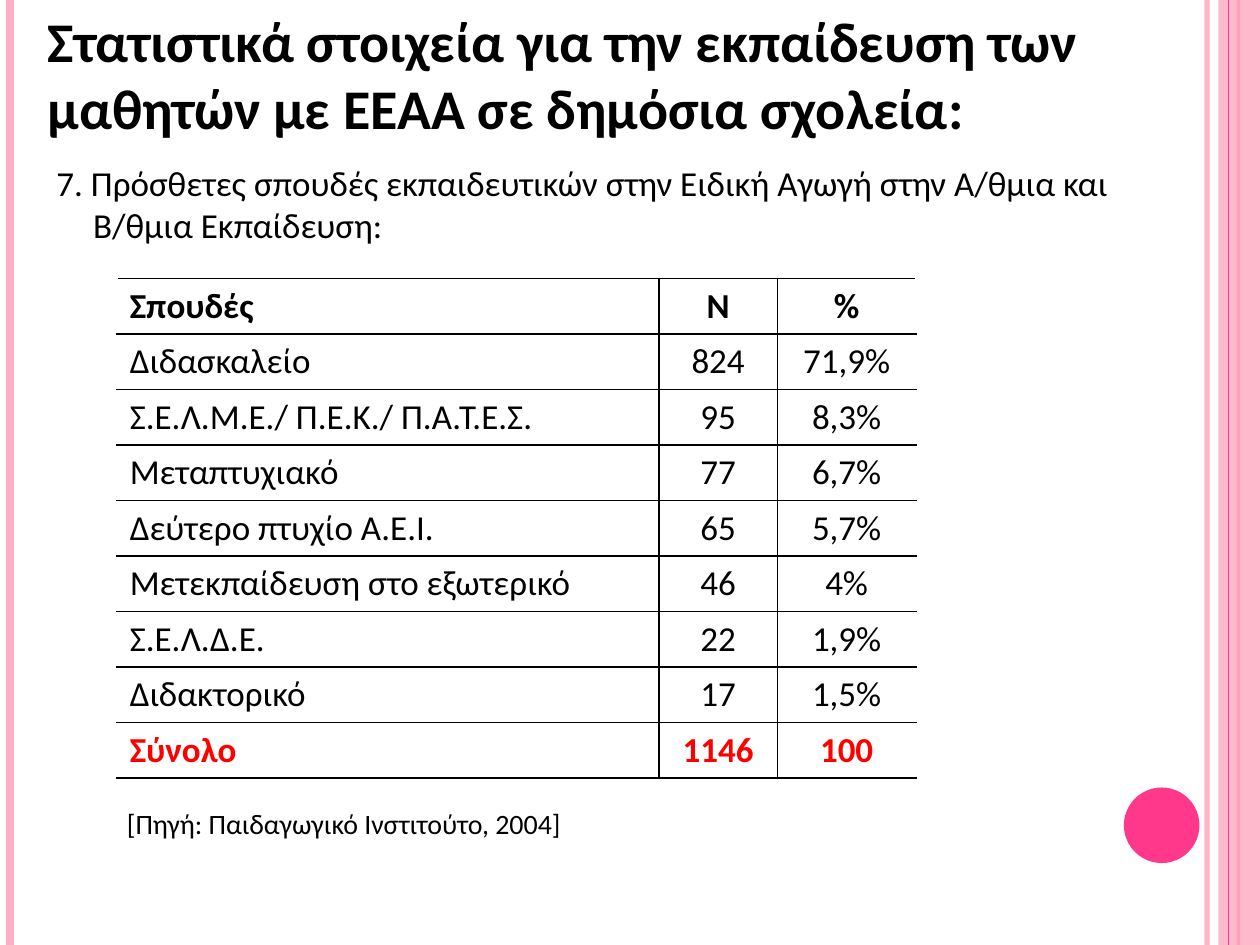
"""Build the slide on teachers' additional studies in special education."""
from lxml import etree
from pptx import Presentation
from pptx.dml.color import RGBColor
from pptx.enum import shapes, text
from pptx.oxml import ns
from pptx.util import Inches, Pt

COLORS = {"pink": "FFAFC5", "magenta": "FF388C", "black": "000000",
          "red": "FF0000", "white": "FFFFFF"}
FONT = "Calibri"

HEADING = "Στατιστικά στοιχεία για την εκπαίδευση των μαθητών με ΕΕΑΑ σε δημόσια σχολεία:"
QUESTION = ("7. Πρόσθετες σπουδές εκπαιδευτικών στην Ειδική Αγωγή στην Α/θμια "
            "και Β/θμια Εκπαίδευση:")
SOURCE = "[Πηγή: Παιδαγωγικό Ινστιτούτο, 2004]"
STUDIES = [
    ("Σπουδές", "Ν", "%"),
    ("Διδασκαλείο", "824", "71,9%"),
    ("Σ.Ε.Λ.Μ.Ε./ Π.Ε.Κ./ Π.Α.Τ.Ε.Σ.", "95", "8,3%"),
    ("Μεταπτυχιακό", "77", "6,7%"),
    ("Δεύτερο πτυχίο Α.Ε.Ι.", "65", "5,7%"),
    ("Μετεκπαίδευση στο εξωτερικό", "46", "4%"),
    ("Σ.Ε.Λ.Δ.Ε.", "22", "1,9%"),
    ("Διδακτορικό", "17", "1,5%"),
    ("Σύνολο", "1146", "100"),
]
COLUMN_WIDTHS = (4.3, 0.94, 1.1)
TABLE_LEFT, TABLE_TOP, TABLE_HEIGHT = 0.93, 2.21, 3.9

# (x, colour, width in points, opacity in percent)
STRIPES_BEHIND = [(9.58, "pink", 3, 93), (0.08, "pink", 4.5, 100),
                  (9.83, "magenta", 1.5, 100)]
STRIPES_FRONT = [(9.75, "magenta", 0.75, 100)]


def rgb(color):
    return RGBColor.from_string(COLORS[color])


def set_opacity(fill_parent, percent):
    color = next(fill_parent.iter(ns.qn("a:srgbClr")))
    etree.SubElement(color, ns.qn("a:alpha"), val=str(percent * 1000))


def add_stripes(slide, stripes):
    for x, color, width, opacity in stripes:
        stripe = slide.shapes.add_connector(
            shapes.MSO_CONNECTOR.STRAIGHT, Inches(x), 0, Inches(x), Inches(7.5))
        stripe.line.color.rgb = rgb(color)
        stripe.line.width = Pt(width)
        properties = stripe.element.spPr
        if opacity < 100:
            set_opacity(properties, opacity)
        etree.SubElement(properties, ns.qn("a:effectLst"))


def add_plain_shape(slide, kind, box, color):
    shape = slide.shapes.add_shape(kind, *map(Inches, box))
    shape.shadow.inherit = False
    shape.fill.solid()
    shape.fill.fore_color.rgb = rgb(color)
    shape.line.fill.background()
    return shape


def write(frame, words, size, color="black", bold=False, align=text.PP_ALIGN.LEFT):
    paragraph = frame.paragraphs[0]
    paragraph.alignment = align
    run = paragraph.add_run()
    run.text = words
    run.font.name = FONT
    run.font.size = Pt(size)
    run.font.bold = bold
    run.font.color.rgb = rgb(color)
    return paragraph


def place(shape, box):
    shape.left, shape.top, shape.width, shape.height = map(Inches, box)
    frame = shape.text_frame
    frame.word_wrap = True
    frame.auto_size = text.MSO_AUTO_SIZE.NONE
    frame.vertical_anchor = text.MSO_ANCHOR.TOP
    return frame


def set_borders(cell, edges):
    properties = cell._tc.get_or_add_tcPr()
    for position, (edge, color) in enumerate(edges.items()):
        border = etree.Element(ns.qn(f"a:ln{edge}"), w=str(Pt(1)))
        fill = etree.SubElement(border, ns.qn("a:solidFill"))
        etree.SubElement(fill, ns.qn("a:srgbClr"), val=COLORS[color])
        properties.insert(position, border)


def add_studies(slide):
    rows, columns = len(STUDIES), len(COLUMN_WIDTHS)
    table = slide.shapes.add_table(
        rows, columns, Inches(TABLE_LEFT), Inches(TABLE_TOP),
        Inches(sum(COLUMN_WIDTHS)), Inches(TABLE_HEIGHT)).table
    table.first_row = table.horz_banding = False
    for column, width in zip(table.columns, COLUMN_WIDTHS):
        column.width = Inches(width)
    for r, study in enumerate(STUDIES):
        total = r == rows - 1
        for c, words in enumerate(study):
            cell = table.cell(r, c)
            cell.fill.background()
            write(cell.text_frame, words, 20, "red" if total else "black",
                  bold=total or r == 0,
                  align=text.PP_ALIGN.CENTER if c else text.PP_ALIGN.LEFT)
            set_borders(cell, {"L": "black" if c else "white",
                               "R": "black" if c < columns - 1 else "white",
                               "T": "black", "B": "black"})


def main():
    deck = Presentation()
    deck.slide_width, deck.slide_height = Inches(10), Inches(7.5)
    slide = deck.slides.add_slide(deck.slide_layouts[5])

    add_stripes(slide, STRIPES_BEHIND)
    band = add_plain_shape(slide, shapes.MSO_SHAPE.RECTANGLE, (9.67, 0, 0.33, 7.5), "pink")
    set_opacity(band.element.spPr, 87)
    add_stripes(slide, STRIPES_FRONT)
    add_plain_shape(slide, shapes.MSO_SHAPE.OVAL, (8.92, 6.25, 0.6, 0.6), "magenta")

    write(place(slide.shapes.title, (0.28, 0, 9.13, 1.18)), HEADING, 32, bold=True)
    question_box = slide.shapes.add_textbox(0, 0, 0, 0)
    question = write(place(question_box, (0.35, 1.23, 9.13, 0.77)), QUESTION, 20)
    indent = question._p.get_or_add_pPr()
    indent.set("marL", str(Inches(0.29)))
    indent.set("indent", str(Inches(-0.29)))
    source_box = slide.shapes.add_textbox(0, 0, 0, 0)
    write(place(source_box, (0.91, 6.35, 9.13, 0.37)), SOURCE, 16)
    add_studies(slide)
    deck.save("out.pptx")


if __name__ == "__main__":
    main()
